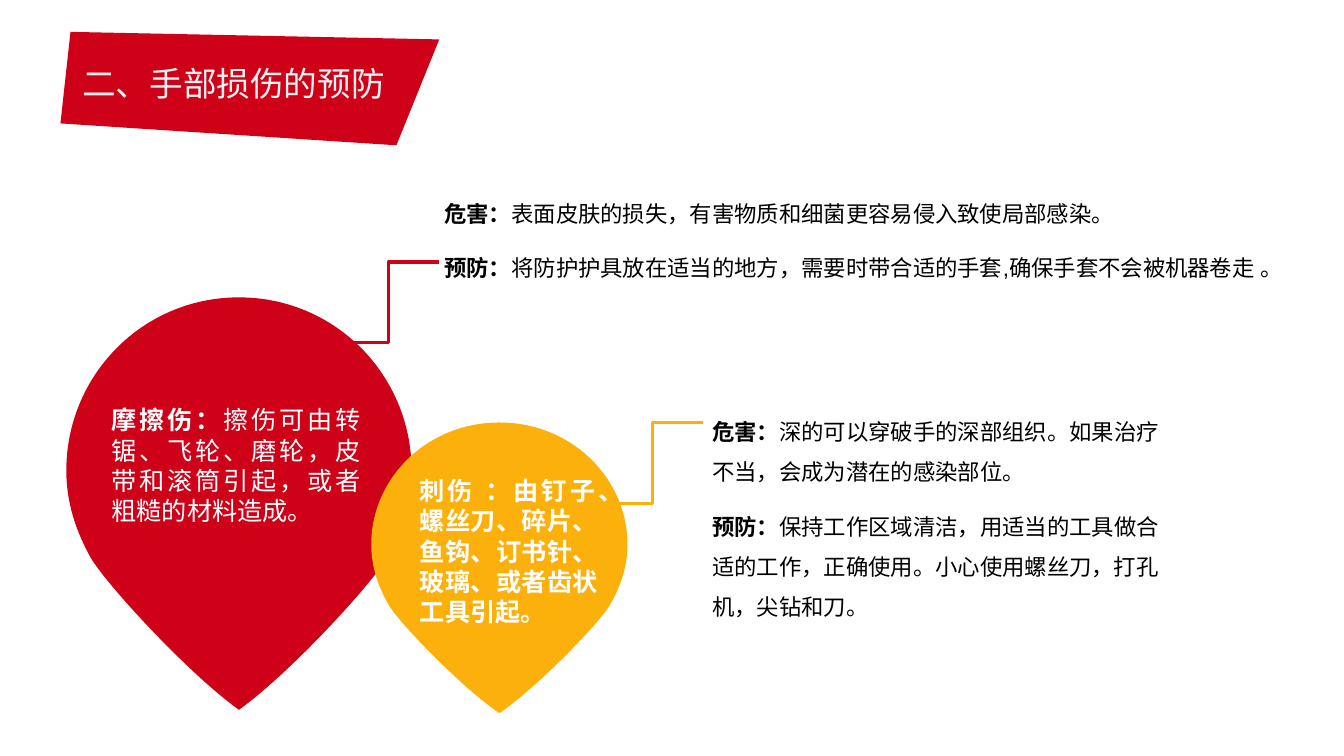
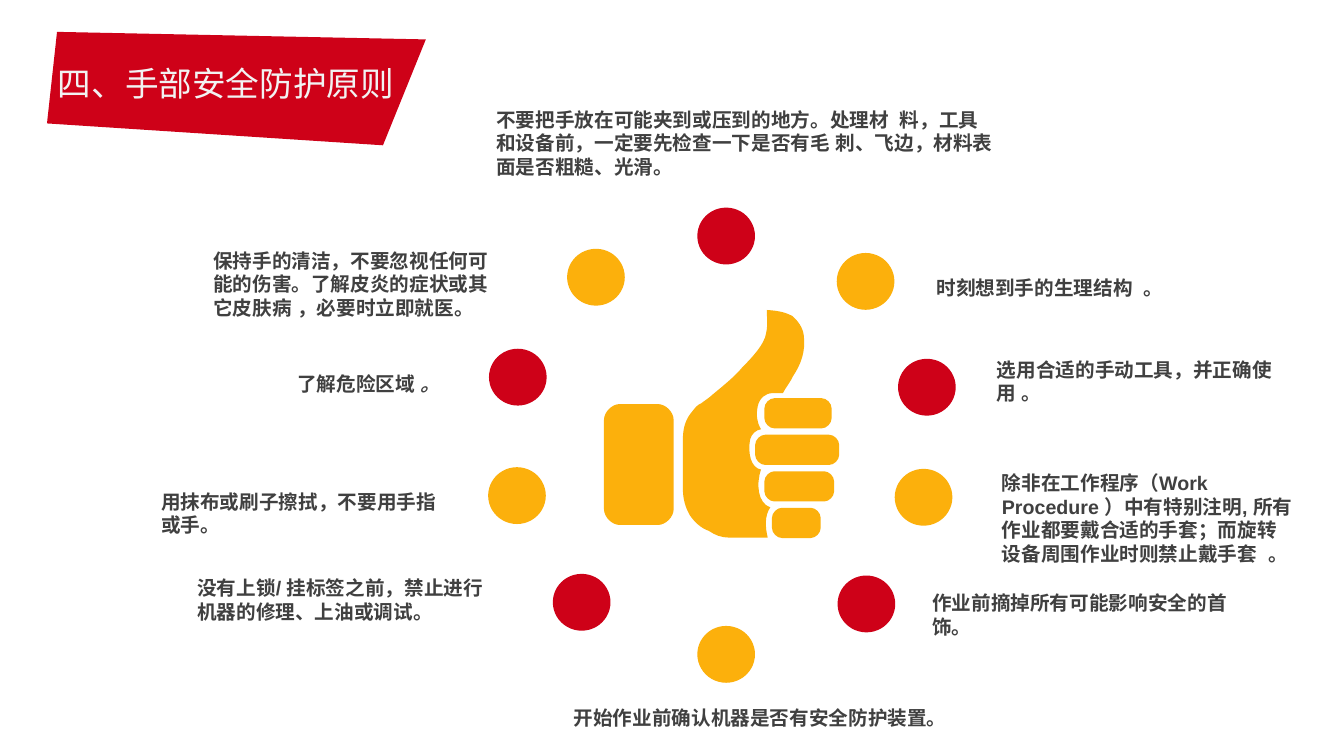
from dataclasses import dataclass
from itertools import cycle

from lxml import etree
from pptx import Presentation
from pptx.dml.color import RGBColor
from pptx.enum.shapes import MSO_CONNECTOR, MSO_SHAPE
from pptx.enum.text import MSO_ANCHOR, MSO_AUTO_SIZE, PP_ALIGN
from pptx.oxml.ns import qn
from pptx.util import Emu, Inches, Pt

Point = tuple[float, float]

# Shared grid (160 columns by 90 rows), colours and font
SLIDE_W, SLIDE_H = Emu(12192000), Inches(7.5)
CELL = SLIDE_W / 160
RED, AMBER = "CE0118", "FCB00C"
WHITE, PALE, BLACK, GREY = "FFFFFF", "F2F2F2", "000000", "404040"
FONT = "Arial"
TITLE_LAYOUT, TWO_LISTS_LAYOUT = 5, 3

# Title band corners, relative to its left edge
BAND = [(1.2, 3.8), (45.1, 4.7), (40, 17.3), (0, 14.7)]

# Curved outlines: a start point, then three Bézier points per segment
# Right half of a pin, as shares of its width and height
PIN_HALF = [(0.5, 0), (0.78, 0), (1, 0.19), (1, 0.42), (1, 0.5), (0.97, 0.57),
            (0.93, 0.63), (0.89, 0.69), (0.65, 0.91), (0.5, 1)]
PIN = PIN_HALF + [(1 - x, y) for x, y in PIN_HALF[-2::-1]]

# Palm and thumb
PALM = [
    (91.7, 60.4),
    (90.2, 59.9), (90, 57.6), (90.6, 55.9),
    (89.4, 55.7), (89, 54), (89.3, 52.3),
    (89.5, 51.6), (90, 51.2), (90.6, 51.1),
    (90.1, 50.3), (90, 49.4), (90.2, 48.4),
    (90.4, 47.4), (91.1, 46.8), (92, 46.8),
    (92.4, 46.8), (92.8, 46.8), (93.2, 46.8),
    (93.5, 46.2), (94.2, 45.3), (94.4, 44.8),
    (95.4, 43.3), (95.9, 41.8), (95.7, 40),
    (95.6, 39), (95, 38.2), (94.3, 37.6),
    (93.5, 37.2), (92.8, 37), (91.3, 36.9),
    (91.3, 38), (91.4, 39), (91.2, 39.7),
    (91, 41), (89.5, 42.6), (88.4, 43.7),
    (87.4, 44.9), (86, 46), (84.8, 47),
    (84.4, 47.4), (84, 47.6), (83.5, 48),
    (83, 48.2), (82.7, 48.6), (82.4, 49),
    (81.6, 49.9), (81.3, 51), (81.3, 52.3),
    (81.3, 54), (81.3, 56), (81.3, 58.2),
    (81.3, 59.4), (81.6, 60.4), (82.1, 61.3),
    (82.7, 62.2), (83.5, 62.9), (84.4, 63.2),
    (85.1, 63.7), (85.9, 64), (86.8, 64),
    (88.4, 64), (90, 64), (91.4, 64),
    (91.1, 62.8), (91, 61.4), (91.7, 60.4),
]
FINGERS = [(91, 8), (89.9, 10), (91, 8.3), (91.9, 5.8)]  # left, width
FINGER_TOP, FINGER_STEP, FINGER_H = 47.4, 4.35, 3.6


@dataclass
class Span:
    text: str
    bold: bool = False
    italic: bool = False


@dataclass
class Box:
    col: float
    row: float
    cols: float
    rows: float


@dataclass
class Injury:
    colour: str
    pin: Box
    label_box: Box
    label: list[Span]
    advice_box: Box
    harm: str
    prevention: str
    line_spacing: float
    gap: float
    elbow: Point


@dataclass
class Principle:
    dot: Point
    text_at: Point
    cols: float
    lines: int
    text: str
    tail: str = ""


INJURIES = [
    Injury(RED, Box(7.9, 35.4, 41.1, 49.1), Box(12.1, 47.6, 32, 15.7),
           [Span("摩擦伤：", True),
            Span("擦伤可由转锯、飞轮、磨轮，皮带和滚筒引起，或者粗糙的材料造成。")],
           Box(51.7, 23.2, 101, 10.9),
           "表面皮肤的损失，有害物质和细菌更容易侵入致使局部感染。",
           "将防护护具放在适当的地方，需要时带合适的手套,确保手套不会被机器卷走 。",
           1, 19.3, (52.3, 31.2)),
    Injury(AMBER, Box(44.2, 50.3, 30.5, 34.6), Box(48.8, 56, 23.6, 19.3),
           [Span("刺伤 ：由钉子、螺丝刀、碎片、鱼钩、订书针、玻璃、或者齿状工具引起。", True)],
           Box(83.6, 47.6, 56.4, 27.5),
           "深的可以穿破手的深部组织。如果治疗不当，会成为潜在的感染部位。",
           "保持工作区域清洁，用适当的工具做合适的工作，正确使用。小心使用螺丝刀，打孔机，尖钻和刀。",
           1.5, 10, (83.7, 50.3)),
]

# Clockwise from the top
PRINCIPLES = [
    Principle((83.1, 24.8), (57.9, 12.2), 61.6, 3,
              "不要把手放在可能夹到或压到的地方。处理材  料，工具和设备前，"
              "一定要先检查一下是否有毛 刺、飞边，材料表面是否粗糙、光滑。"),
    Principle((99.7, 30.2), (110.3, 32.3), 36.8, 1, "时刻想到手的生理结构  。"),
    Principle((107, 42.8), (117.5, 42), 36.7, 2, "选用合适的手动工具，并正确使用 。"),
    Principle((106.6, 55.9), (118.1, 55.5), 37.2, 4,
              "除非在工作程序（Work Procedure ）中有特别注明, "
              "所有作业都要戴合适的手套；而旋转设备周围作业时则禁止戴手套  。"),
    Principle((99.8, 68.6), (109.8, 69.8), 38.6, 2, "作业前摘掉所有可能影响安全的首饰。"),
    Principle((83.1, 74.6), (67.1, 83.5), 47.9, 1, "开始作业前确认机器是否有安全防护装置。"),
    Principle((65.9, 68.4), (22.3, 68), 37.2, 2,
              "没有上锁/ 挂标签之前，禁止进行机器的修理、上油或调试。"),
    Principle((58.2, 55.7), (18, 57.7), 37.2, 2, "用抹布或刷子擦拭，不要用手指或手。"),
    Principle((58.3, 41.6), (34.2, 43.7), 36.8, 1, "了解危险区域", " 。"),
    Principle((67.6, 29.7), (24.2, 29), 36.8, 3,
              "保持手的清洁，不要忽视任何可能的伤害。"
              "了解皮炎的症状或其它皮肤病 ，必要时立即就医。"),
]


def cells(count: float) -> Emu:
    return Emu(round(count * CELL))


def place(box: Box) -> list[Emu]:
    return [cells(n) for n in (box.col, box.row, box.cols, box.rows)]


def rgb(colour: str) -> RGBColor:
    return RGBColor.from_string(colour)


def finish(shape, colour: str) -> None:
    shape.shadow.inherit = False
    shape.fill.solid()
    shape.fill.fore_color.rgb = rgb(colour)
    shape.line.fill.background()


def add_outline(slide, contours: list[list[Point]], colour: str):
    """Draw closed contours as one shape."""
    start, *_ = contours[0]
    builder = slide.shapes.build_freeform(*map(cells, start))
    for i, contour in enumerate(contours):
        first, *rest = [(cells(x), cells(y)) for x, y in contour]
        if i:
            builder.move_to(*first)
        builder.add_line_segments(rest, close=True)
    shape = builder.convert_to_shape()
    finish(shape, colour)
    return shape


def add_curved_outline(slide, contours: list[list[Point]], colour: str) -> None:
    """Draw contours whose points are Bézier triples after the start."""
    shape = add_outline(slide, contours, colour)
    lines = list(shape._element.iter(qn("a:lnTo")))
    for i in range(0, len(lines), 3):
        curve = etree.Element(qn("a:cubicBezTo"))
        lines[i].addprevious(curve)
        for line in lines[i:i + 3]:
            curve.append(line[0])
            line.getparent().remove(line)


def rounded(box: Box, radius: float) -> list[Point]:
    """Bézier contour of a rounded box, clockwise from the top edge's left end."""
    left, top = box.col, box.row
    right, bottom = left + box.cols, top + box.rows
    r = radius
    turns = [((left + r, top), (right - r, top), (right, top), (right, top + r)),
             ((right, top + r), (right, bottom - r), (right, bottom), (right - r, bottom)),
             ((right - r, bottom), (left + r, bottom), (left, bottom), (left, bottom - r)),
             ((left, bottom - r), (left, top + r), (left, top), (left + r, top))]
    contour = [turns[0][0]]
    for edge_start, edge_end, corner, turn_end in turns:
        contour += [edge_start, edge_end, edge_end]
        contour += [tuple((p + c) / 2 for p, c in zip(end, corner))
                    for end in (edge_end, turn_end)] + [turn_end]
    return contour


def style_run(run, size: float, colour: str, bold: bool = False, italic: bool = False) -> None:
    run.font.size, run.font.name = Pt(size), FONT
    run.font.bold, run.font.italic = bold, italic
    run.font.color.rgb = rgb(colour)
    etree.SubElement(run._r.get_or_add_rPr(), qn("a:ea"), typeface=FONT)


def write(paragraph, spans: list[Span], size: float, colour: str) -> None:
    for span in spans:
        run = paragraph.add_run()
        run.text = span.text
        style_run(run, size, colour, span.bold, span.italic)


def add_text(slide, box: Box, spans: list[Span], size: float, colour: str):
    frame = slide.shapes.add_textbox(*place(box)).text_frame
    frame.word_wrap = True
    write(frame.paragraphs[0], spans, size, colour)
    return frame.paragraphs[0]


def add_titled_slide(prs, layout: int, title: str, band_left: float, title_left: float):
    slide = prs.slides.add_slide(prs.slide_layouts[layout])
    heading = slide.shapes.title
    heading.left, heading.top, heading.width, heading.height = place(
        Box(title_left, 6.9, 43.7, 6.1))
    frame = heading.text_frame
    frame.text = title
    frame.auto_size, frame.vertical_anchor = MSO_AUTO_SIZE.NONE, MSO_ANCHOR.TOP
    frame.paragraphs[0].alignment = PP_ALIGN.LEFT
    style_run(frame.paragraphs[0].runs[0], 24, PALE)
    band = add_outline(slide, [[(band_left + x, y) for x, y in BAND]], RED)
    heading.element.addprevious(band.element)  # the band lies behind the title
    return slide


def fill_advice(advice, injury: Injury) -> None:
    advice.left, advice.top, advice.width, advice.height = place(injury.advice_box)
    frame = advice.text_frame
    frame.auto_size = MSO_AUTO_SIZE.NONE
    rows = [("危害：", injury.harm, 0), ("预防：", injury.prevention, injury.gap)]
    for i, (lead, detail, gap) in enumerate(rows):
        paragraph = frame.add_paragraph() if i else frame.paragraphs[0]
        properties = paragraph._p.get_or_add_pPr()
        properties.set("marL", "0")
        properties.set("indent", "0")
        etree.SubElement(properties, qn("a:buNone"))
        paragraph.line_spacing, paragraph.space_before = float(injury.line_spacing), Pt(gap)
        write(paragraph, [Span(lead, True), Span(detail)], 16, BLACK)


def add_elbow(slide, start: Point, colour: str) -> None:
    x, y = start
    elbow = slide.shapes.add_connector(
        MSO_CONNECTOR.ELBOW, *[cells(n) for n in (x, y, x - 12, y + 9.6)])
    elbow.line.color.rgb = rgb(colour)
    elbow.line.width = Pt(2.25)
    etree.SubElement(elbow._element.spPr, qn("a:effectLst"))


def build_injuries(prs) -> None:
    slide = add_titled_slide(prs, TWO_LISTS_LAYOUT, "二、手部损伤的预防", 7.2, 8.6)
    advice_lists = list(slide.placeholders)[1:]
    for injury, advice in zip(INJURIES, advice_lists):
        pin = injury.pin
        outline = [(pin.col + x * pin.cols, pin.row + y * pin.rows) for x, y in PIN]
        add_curved_outline(slide, [outline], injury.colour)
        fill_advice(advice, injury)
        add_elbow(slide, injury.elbow, injury.colour)
        label = add_text(slide, injury.label_box, injury.label, 18, WHITE)
        label.alignment = PP_ALIGN.JUSTIFY


def build_principles(prs) -> None:
    slide = add_titled_slide(prs, TITLE_LAYOUT, "四、手部安全防护原则", 5.6, 5.7)
    # Thumbs-up hand: palm, cuff and four fingers
    cuff = rounded(Box(71.9, 48.1, 8.3, 14.4), 1.9)
    fingers = [rounded(Box(left, FINGER_TOP + i * FINGER_STEP, width, FINGER_H), 1.2)
               for i, (left, width) in enumerate(FINGERS)]
    add_curved_outline(slide, [cuff, PALM, *fingers], AMBER)
    # Ring of dots with their principles
    for principle, colour in zip(PRINCIPLES, cycle((RED, AMBER))):
        dot = slide.shapes.add_shape(MSO_SHAPE.OVAL, *place(Box(*principle.dot, 6.7, 6.6)))
        finish(dot, colour)
        dot.line.color.rgb, dot.line.width = rgb(colour), Pt(1)
        spans = [Span(principle.text, True)]
        if principle.tail:
            spans.append(Span(principle.tail, True, True))
        box = Box(*principle.text_at, principle.cols, 1.2 + 2.83 * principle.lines)
        add_text(slide, box, spans, 14, GREY)


def main() -> None:
    prs = Presentation()
    prs.slide_width, prs.slide_height = SLIDE_W, SLIDE_H
    build_injuries(prs)
    build_principles(prs)
    prs.save("out.pptx")


if __name__ == "__main__":
    main()
